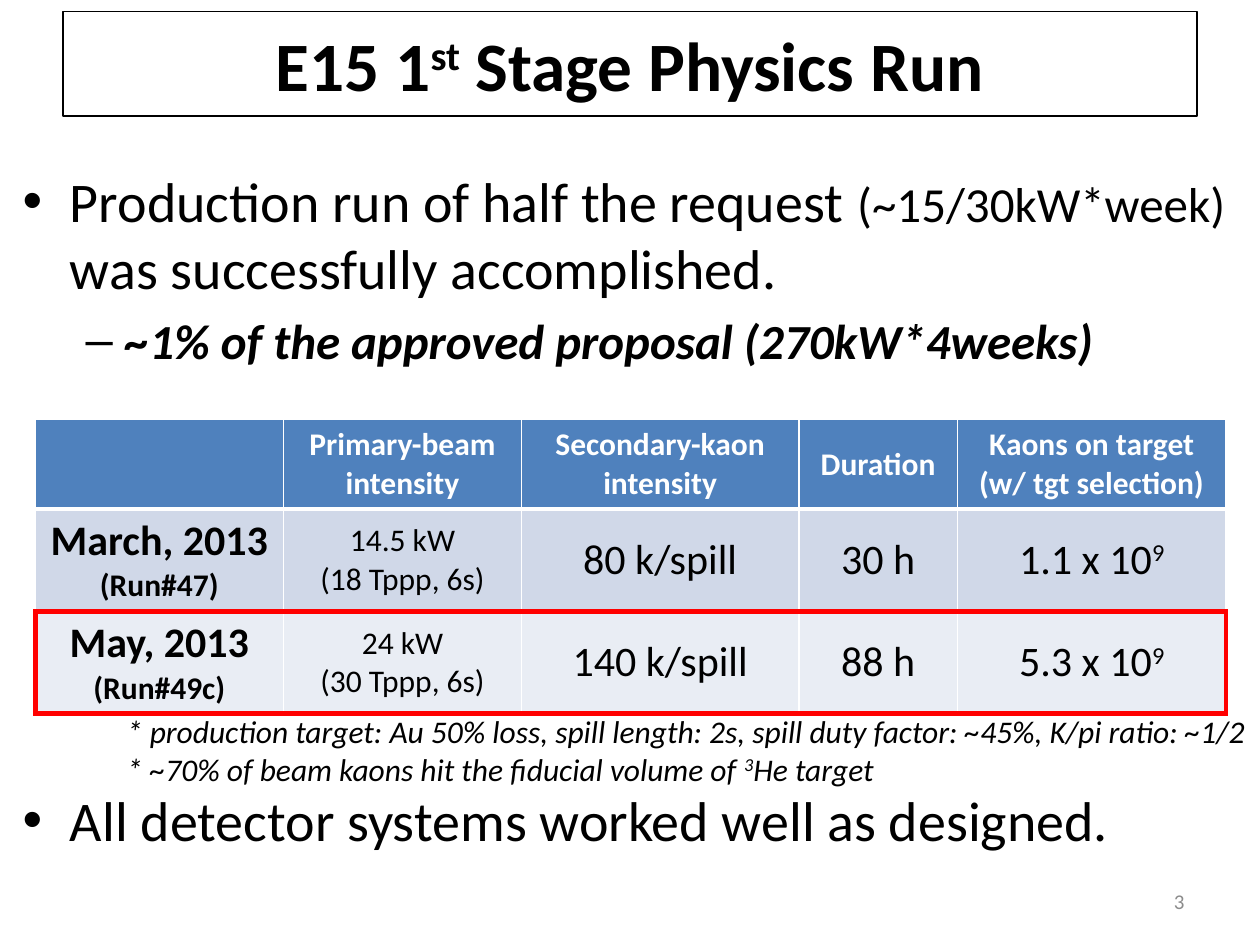
from lxml.etree import SubElement
from pptx import Presentation
from pptx.dml.color import RGBColor
from pptx.enum.text import MSO_ANCHOR, MSO_AUTO_SIZE, PP_ALIGN
from pptx.oxml.ns import qn
from pptx.util import Inches, Pt

BLACK = RGBColor(0, 0, 0)
WHITE = RGBColor(255, 255, 255)
GRAY = RGBColor(0x8C, 0x8C, 0x8C)
RED = RGBColor(255, 0, 0)
HEADER_BLUE = RGBColor(0x4F, 0x81, 0xBD)
MARCH_BLUE = RGBColor(0xD0, 0xD8, 0xE8)
MAY_BLUE = RGBColor(0xE9, 0xED, 0xF4)
FONT = "Calibri"

TITLE = "E15 1^st^ Stage Physics Run"
REQUEST = [("Production run of half the request ", 32),
           ("(~15/30kW*week)", 28),
           (" was successfully accomplished.", 32)]
PROPOSAL = "~1% of the approved proposal (270kW*4weeks)"
DETECTORS = "All detector systems worked well as designed."
NOTES = [
    "* production target: Au 50% loss, spill length: 2s, spill duty factor: ~45%, K/pi ratio: ~1/2",
    "* ~70% of beam kaons hit the fiducial volume of ^3^He target",
]
PAGE = "3"
RUNS = [
    [[], ["Primary-beam intensity"], ["Secondary-kaon intensity"], ["Duration"],
     ["Kaons on target", "(w/ tgt selection)"]],
    [["March, 2013", "(Run#47)"], ["14.5 kW", "(18 Tppp, 6s)"], ["80 k/spill"],
     ["30 h"], ["1.1 x 10^9^"]],
    [["May, 2013", "(Run#49c)"], ["24 kW", "(30 Tppp, 6s)"], ["140 k/spill"],
     ["88 h"], ["5.3 x 10^9^"]],
]
COLUMN_WIDTHS = [1.97, 1.89, 2.2, 1.26, 2.13]
ROW_HEIGHTS = [0.7, 0.81, 0.81]
ROW_FILLS = [HEADER_BLUE, MARCH_BLUE, MAY_BLUE]
HIGHLIGHTED = 2


def box(left, top, width, height):
    return Inches(left), Inches(top), Inches(width), Inches(height)


def place(part, *bounds):
    part.left, part.top, part.width, part.height = box(*bounds)


def style(font, size, color=BLACK, bold=False, italic=False):
    font.name, font.size = FONT, Pt(size)
    font.bold, font.italic = bold, italic
    font.color.rgb = color


def write(paragraph, text):
    for index, piece in enumerate(text.split("^")):
        run = paragraph.add_run()
        run.text = piece
        if index % 2:
            run._r.get_or_add_rPr().set("baseline", "30000")


def paragraphs_for(frame, lines):
    for index, line in enumerate(lines):
        paragraph = frame.add_paragraph() if index else frame.paragraphs[0]
        write(paragraph, line)
        yield index, paragraph


def set_borders(cell, edges):
    properties = cell._tc.get_or_add_tcPr()
    for position, (side, (color, width)) in enumerate(edges.items()):
        line = SubElement(properties, qn(f"a:ln{side}"), w=str(Pt(width)))
        fill = SubElement(line, qn("a:solidFill"))
        SubElement(fill, qn("a:srgbClr"), val=str(color))
        properties.insert(position, line)


def cell_edges(row, column):
    thin, header_rule, red = (WHITE, 1), (WHITE, 3), (RED, 3)
    marked = row == HIGHLIGHTED
    last = len(COLUMN_WIDTHS) - 1
    return {
        "L": red if marked and column == 0 else thin,
        "R": red if marked and column == last else thin,
        "T": (thin, header_rule, red)[row],
        "B": red if row else header_rule,
    }


def cell_size(row, column, line, line_count):
    if row == 0 or column == 1 or line == 1:
        return 18
    return 24


def add_run_table(slide):
    table = slide.shapes.add_table(
        len(RUNS), len(COLUMN_WIDTHS),
        *box(0.28, 3.33, sum(COLUMN_WIDTHS), sum(ROW_HEIGHTS))).table
    for column, width in zip(table.columns, COLUMN_WIDTHS):
        column.width = Inches(width)
    for row, height in zip(table.rows, ROW_HEIGHTS):
        row.height = Inches(height)
    for r, row in enumerate(RUNS):
        for c, lines in enumerate(row):
            cell = table.cell(r, c)
            cell.fill.solid()
            cell.fill.fore_color.rgb = ROW_FILLS[r]
            cell.vertical_anchor = MSO_ANCHOR.MIDDLE
            set_borders(cell, cell_edges(r, c))
            for index, paragraph in paragraphs_for(cell.text_frame, lines):
                paragraph.alignment = PP_ALIGN.CENTER
                style(paragraph.font, cell_size(r, c, index, len(lines)),
                      BLACK if r else WHITE, bold=r == 0 or c == 0)


def main():
    deck = Presentation()
    deck.slide_width, deck.slide_height = Inches(10), Inches(7.5)
    slide = deck.slides.add_slide(deck.slide_layouts[1])

    title = slide.shapes.title
    place(title, 0.5, 0.09, 9, 0.83)
    title.line.color.rgb = BLACK
    title.line.width = Pt(0.75)
    title.text_frame.auto_size = MSO_AUTO_SIZE.NONE
    title.text_frame.vertical_anchor = MSO_ANCHOR.MIDDLE
    heading = title.text_frame.paragraphs[0]
    write(heading, TITLE)
    heading.alignment = PP_ALIGN.CENTER
    style(heading.font, 39.6, bold=True)

    body = slide.placeholders[1]
    place(body, 0.08, 1.27, 9.8, 6.06)
    frame = body.text_frame
    frame.auto_size = MSO_AUTO_SIZE.NONE
    request = frame.paragraphs[0]
    for text, size in REQUEST:
        run = request.add_run()
        run.text = text
        style(run.font, size)
    proposal = frame.add_paragraph()
    proposal.level = 1
    write(proposal, PROPOSAL)
    style(proposal.font, 28, bold=True, italic=True)
    detectors = frame.add_paragraph()
    detectors.space_before = Pt(238)
    write(detectors, DETECTORS)
    style(detectors.font, 32)

    add_run_table(slide)

    notes = slide.shapes.add_textbox(*box(0.91, 5.6, 9.13, 0.71)).text_frame
    notes.word_wrap = False
    for _, paragraph in paragraphs_for(notes, NOTES):
        style(paragraph.font, 18, italic=True)

    page = slide.shapes.add_textbox(*box(7.17, 6.95, 2.33, 0.4)).text_frame
    page.word_wrap = True
    page.vertical_anchor = MSO_ANCHOR.MIDDLE
    for _, paragraph in paragraphs_for(page, [PAGE]):
        paragraph.alignment = PP_ALIGN.RIGHT
        style(paragraph.font, 12, GRAY)

    deck.save("out.pptx")


if __name__ == "__main__":
    main()
